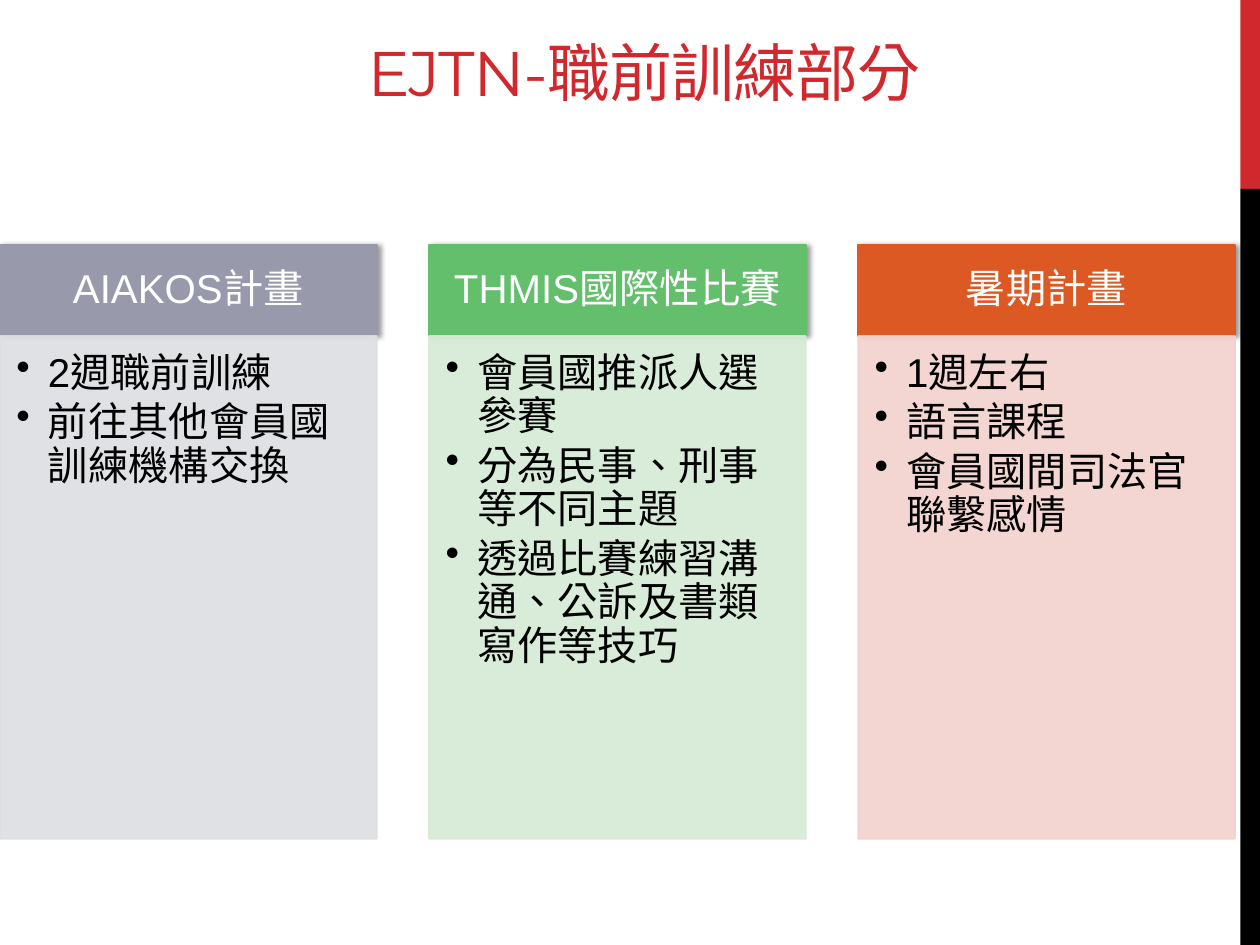
"""Builds the EJTN pre-service training slide with three programme cards."""
from lxml import etree
from pptx import Presentation
from pptx.dml.color import RGBColor
from pptx.enum import lang, shapes, text
from pptx.oxml.ns import qn
from pptx.util import Pt

COLORS = {
    "red": "D1282E", "black": "000000", "white": "FFFFFF",
    "grey": "989AAC", "pale_grey": "DDDEE3",
    "green": "63BF6C", "pale_green": "D5EAD5",
    "orange": "DC5924", "pale_orange": "F2D1CC",
}
PROGRAMMES = [
    ("AIAKOS計畫", "grey", ["2週職前訓練", "前往其他會員國訓練機構交換"]),
    ("THMIS國際性比賽", "green",
     ["會員國推派人選參賽", "分為民事、刑事等不同主題", "透過比賽練習溝通、公訴及書類寫作等技巧"]),
    ("暑期計畫", "orange", ["1週左右", "語言課程", "會員國間司法官聯繫感情"]),
]
CARD_WIDTH, CARD_PITCH = 215.3, 245.2
HEADER_TOP, HEADER_HEIGHT, BODY_HEIGHT = 140.2, 51.8, 287.3


def color(name):
    """Return the named colour."""
    return RGBColor.from_string(COLORS[name])


def add_element(parent, tag, **attributes):
    """Append a drawing element with the given attributes."""
    element = etree.SubElement(parent, qn(tag))
    for name, value in attributes.items():
        element.set(name, str(value))
    return element


def write(frame, lines, size=23, font="Arial", fill="black", align=text.PP_ALIGN.LEFT,
          anchor=text.MSO_ANCHOR.TOP, margins=None, line_spacing=None,
          space_after=0, tracking=None, bullet=False):
    """Fill a text frame with formatted paragraphs."""
    frame.word_wrap = True
    frame.auto_size = text.MSO_AUTO_SIZE.NONE
    frame.vertical_anchor = anchor
    if margins:
        (frame.margin_left, frame.margin_top,
         frame.margin_right, frame.margin_bottom) = map(Pt, margins)
    for index, line in enumerate(lines):
        paragraph = frame.add_paragraph() if index else frame.paragraphs[0]
        paragraph.alignment = align
        paragraph.space_after = Pt(space_after)
        if line_spacing:
            paragraph.line_spacing = line_spacing
        run = paragraph.add_run()
        run.text = line
        run.font.size, run.font.name = Pt(size), font
        run.font.color.rgb = color(fill)
        run.font.language_id = lang.MSO_LANGUAGE_ID.TRADITIONAL_CHINESE
        if tracking:
            run._r.get_or_add_rPr().set("spc", str(round(tracking * 100)))
        if bullet:
            properties = paragraph._p.get_or_add_pPr()
            properties.set("marL", str(Pt(18)))
            properties.set("indent", str(-Pt(18)))
            add_element(properties, "a:buChar", char="•")


class SlideBuilder:
    """Holds the slide and draws its elements in one style."""

    def __init__(self, slide):
        """Keep the current slide."""
        self.slide = slide

    def title(self, line, left, top, width, height):
        """Place the title placeholder."""
        shape = self.slide.shapes.title
        shape.left, shape.top, shape.width, shape.height = map(Pt, (left, top, width, height))
        write(shape.text_frame, [line], size=36, font="Montserrat", fill="red",
              align=text.PP_ALIGN.CENTER, anchor=text.MSO_ANCHOR.BOTTOM, tracking=-0.6)

    def box(self, left, top, width, height, fill, outlined=False, opacity=None):
        """Draw a filled rectangle."""
        shape = self.slide.shapes.add_shape(
            shapes.MSO_SHAPE.RECTANGLE, *map(Pt, (left, top, width, height)))
        shape.shadow.inherit = False
        shape.fill.solid()
        shape.fill.fore_color.rgb = color(fill)
        if outlined:
            shape.line.color.rgb = color(fill)
            shape.line.width = Pt(1)
        else:
            shape.line.fill.background()
        if opacity:
            for element in shape._element.spPr.iter(qn("a:srgbClr")):
                add_element(element, "a:alpha", val=opacity * 1000)
        return shape

    def header(self, line, left, fill):
        """Draw a shadowed card header."""
        shape = self.box(left, HEADER_TOP, CARD_WIDTH, HEADER_HEIGHT, fill, outlined=True)
        effects = shape._element.spPr.find(qn("a:effectLst"))
        shadow = add_element(effects, "a:outerShdw", blurRad=Pt(3.1), dist=Pt(1.8),
                             dir=0, rotWithShape=0)
        shadow_color = add_element(shadow, "a:srgbClr", val=COLORS["black"])
        add_element(shadow_color, "a:alpha", val=40000)
        write(shape.text_frame, [line], fill="white", align=text.PP_ALIGN.CENTER,
              anchor=text.MSO_ANCHOR.MIDDLE, margins=(13, 7.2, 13, 7.2), line_spacing=0.9)

    def bullets(self, lines, left, fill):
        """Draw a card body with its bullet list."""
        shape = self.box(left, HEADER_TOP + HEADER_HEIGHT, CARD_WIDTH, BODY_HEIGHT,
                         fill, outlined=True, opacity=90)
        write(shape.text_frame, lines, margins=(9.4, 9.4, 13, 14.4),
              line_spacing=0.9, space_after=3.45, bullet=True)


def main():
    """Build and save the slide."""
    presentation = Presentation()
    presentation.slide_width, presentation.slide_height = Pt(720), Pt(540)
    builder = SlideBuilder(presentation.slides.add_slide(presentation.slide_layouts[5]))
    builder.box(708.75, 0, 11.25, 108, "red")
    builder.box(708.75, 108, 11.25, 432, "black")
    builder.title("EJTN-職前訓練部分", 36, 12, 664, 54)
    for index, (name, fill, lines) in enumerate(PROGRAMMES):
        left = index * CARD_PITCH
        builder.header(name, left, fill)
        builder.bullets(lines, left, f"pale_{fill}")
    presentation.save("out.pptx")


if __name__ == "__main__":
    main()
